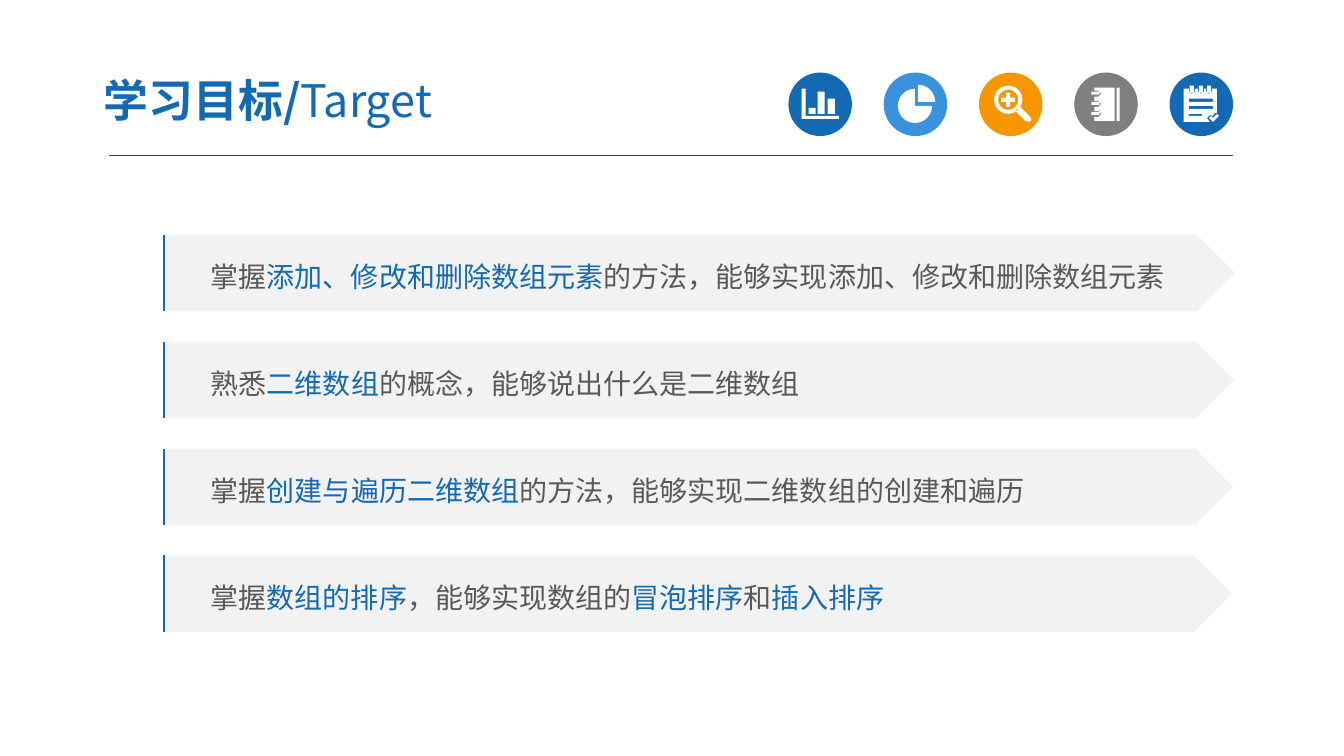
from math import cos, radians, sin

from lxml.etree import SubElement
from pptx import Presentation
from pptx.dml.color import RGBColor
from pptx.enum.shapes import MSO_CONNECTOR, MSO_SHAPE
from pptx.enum.text import MSO_ANCHOR, MSO_AUTO_SIZE, PP_ALIGN
from pptx.oxml.ns import qn
from pptx.util import Inches, Pt

BLUE = RGBColor(0x13, 0x69, 0xB2)
LIGHT_BLUE = RGBColor(0x39, 0x92, 0xDB)
ORANGE = RGBColor(0xF7, 0x96, 0x00)
GRAY = RGBColor(0x7F, 0x7F, 0x7F)
RULE_GRAY = RGBColor(0x40, 0x40, 0x40)
PALE = RGBColor(0xF2, 0xF2, 0xF2)
TEXT_GRAY = RGBColor(0x59, 0x59, 0x59)
WHITE = RGBColor(0xFF, 0xFF, 0xFF)
FONT = "Noto Sans CJK SC"

ICON_SIZE = 0.63
# Each goal is a list of (text, highlighted) pieces.
GOALS = [
    [("掌握", False), ("添加、修改和删除数组元素", True),
     ("的方法，能够实现添加、修改和删除数组元素", False)],
    [("熟悉", False), ("二维数组", True), ("的概念，能够说出什么是二维数组", False)],
    [("掌握", False), ("创建与遍历二维数组", True),
     ("的方法，能够实现二维数组的创建和遍历", False)],
    [("掌握", False), ("数组的排序", True), ("，能够实现数组的", False),
     ("冒泡排序", True), ("和", False), ("插入排序", True)],
]


def add_run(paragraph, text, size, color, bold=False):
    run = paragraph.add_run()
    run.text = text
    run.font.size = Pt(size)
    run.font.bold = bold
    run.font.color.rgb = color
    run.font.name = FONT
    SubElement(run.font._element, qn("a:ea"), typeface=FONT)


def add_filled(slide, kind, box, color):
    shape = slide.shapes.add_shape(kind, *[Inches(value) for value in box])
    shape.shadow.inherit = False
    shape.fill.solid()
    shape.fill.fore_color.rgb = color
    shape.line.fill.background()
    return shape


def block(left, top, width, height):
    """Outline of a rectangle."""
    right, bottom = left + width, top + height
    return [(left, top), (right, top), (right, bottom), (left, bottom)]


def arc(x, y, radius, start=0, sweep=360):
    """Points along an arc, clockwise from the right, in degrees."""
    steps = sweep // 15
    angles = [radians(start + sweep * step / steps) for step in range(steps + 1)]
    return [(x + radius * cos(angle), y + radius * sin(angle)) for angle in angles]


def bar_chart_outlines():
    frame = [(0.13, 0.16), (0.17, 0.16), (0.17, 0.43), (0.5, 0.43), (0.5, 0.46), (0.13, 0.46)]
    return [frame, block(0.2, 0.35, 0.07, 0.06), block(0.29, 0.19, 0.07, 0.22),
            block(0.39, 0.26, 0.07, 0.15)]


def pie_outlines():
    return [[(0.31, 0.33)] + arc(0.31, 0.33, 0.17, 0, 270),
            [(0.34, 0.29)] + arc(0.34, 0.29, 0.17, 270, 90)]


def magnifier_outlines():
    x, y, arm, half = 0.29, 0.27, 0.07, 0.02
    plus = [(x - half, y - arm), (x + half, y - arm), (x + half, y - half),
            (x + arm, y - half), (x + arm, y + half), (x + half, y + half),
            (x + half, y + arm), (x - half, y + arm), (x - half, y + half),
            (x - arm, y + half), (x - arm, y - half), (x - half, y - half)]
    handle = [(0.41, 0.34), (0.51, 0.44), (0.52, 0.47), (0.5, 0.49), (0.46, 0.48), (0.36, 0.38)]
    return [arc(x, y, 0.14), arc(x, y, 0.1), plus, handle]


def notebook_outlines():
    cover = [(0.2, 0.15), (0.4, 0.15), (0.4, 0.48), (0.2, 0.48)]
    rings = []
    for middle in (0.41, 0.31, 0.21):
        cover += [(0.2, middle + 0.03), (0.24, middle + 0.03), (0.27, middle),
                  (0.24, middle - 0.03), (0.2, middle - 0.03)]
        rings.append(block(0.17, middle - 0.02, 0.08, 0.03))
    return [cover, block(0.42, 0.15, 0.03, 0.33)] + rings


def notepad_outlines():
    sheet = [(0.14, 0.16)]
    rings = []
    for middle in (0.22, 0.31, 0.39):
        sheet += [(middle - 0.03, 0.16), (middle - 0.03, 0.19), (middle, 0.21),
                  (middle + 0.03, 0.19), (middle + 0.03, 0.16)]
        rings.append(block(middle - 0.02, 0.13, 0.04, 0.07))
    sheet += [(0.47, 0.16), (0.47, 0.4), (0.45, 0.4), (0.43, 0.43), (0.4, 0.42),
              (0.37, 0.45), (0.4, 0.49), (0.14, 0.49)]
    lines = [block(0.19, 0.26, 0.24, 0.03), block(0.19, 0.33, 0.24, 0.03),
             block(0.19, 0.41, 0.13, 0.02)]
    tick = [(0.39, 0.45), (0.41, 0.43), (0.43, 0.45), (0.47, 0.41), (0.49, 0.43), (0.43, 0.49)]
    return [sheet, tick] + rings + lines


def add_symbol(slide, left, top, outlines):
    """Draw all outlines as one white shape; nested outlines become holes."""
    placed = [[(Inches(left + x), Inches(top + y)) for x, y in outline] for outline in outlines]
    builder = slide.shapes.build_freeform(*placed[0][0])
    for index, points in enumerate(placed):
        if index:
            builder.move_to(*points[0])
        builder.add_line_segments(points[1:], close=True)
    symbol = builder.convert_to_shape()
    symbol.shadow.inherit = False
    symbol.fill.solid()
    symbol.fill.fore_color.rgb = WHITE
    symbol.line.fill.background()


def add_icons(slide, left, top, pitch):
    icons = [(bar_chart_outlines, BLUE), (pie_outlines, LIGHT_BLUE),
             (magnifier_outlines, ORANGE), (notebook_outlines, GRAY), (notepad_outlines, BLUE)]
    for index, (outlines, color) in enumerate(icons):
        x = left + index * pitch
        add_filled(slide, MSO_SHAPE.OVAL, (x, top, ICON_SIZE, ICON_SIZE), color)
        add_symbol(slide, x, top, outlines())


def add_rule(slide, left, right, y):
    rule = slide.shapes.add_connector(MSO_CONNECTOR.STRAIGHT, Inches(left), Inches(y),
                                      Inches(right), Inches(y))
    rule.line.color.rgb = RULE_GRAY
    rule.line.width = Pt(0.75)
    SubElement(rule._element.spPr, qn("a:effectLst"))


def add_title(slide, left, top, width, height):
    title = slide.shapes.title
    title.left, title.top = Inches(left), Inches(top)
    title.width, title.height = Inches(width), Inches(height)
    frame = title.text_frame
    frame.auto_size = MSO_AUTO_SIZE.NONE
    frame.vertical_anchor = MSO_ANCHOR.MIDDLE
    frame.margin_left = frame.margin_right = Inches(0.13)
    frame.margin_top = frame.margin_bottom = Inches(0.07)
    paragraph = frame.paragraphs[0]
    paragraph.alignment = PP_ALIGN.LEFT
    add_run(paragraph, "学习目标/", 32, BLUE, bold=True)
    add_run(paragraph, "Target", 32, BLUE)


def add_edge(slide, left, top, width, height):
    """Stroke the left side of the given box."""
    bottom = Inches(top + height)
    builder = slide.shapes.build_freeform(Inches(left + width), bottom)
    builder.move_to(Inches(left), bottom)
    builder.add_line_segments([(Inches(left), Inches(top))], close=False)
    edge = builder.convert_to_shape()
    edge.shadow.inherit = False
    edge.fill.background()
    edge.line.color.rgb = BLUE
    edge.line.width = Pt(1.5)


def add_goal(slide, pieces, left, top, width, height):
    arrow = add_filled(slide, MSO_SHAPE.PENTAGON, (left, top, width, height), PALE)
    frame = arrow.text_frame
    frame.word_wrap = True
    frame.vertical_anchor = MSO_ANCHOR.MIDDLE
    frame.margin_left = Inches(0.47)
    paragraph = frame.paragraphs[0]
    paragraph.alignment = PP_ALIGN.LEFT
    paragraph.line_spacing = 1.2
    for text, highlighted in pieces:
        add_run(paragraph, text, 20, BLUE if highlighted else TEXT_GRAY)
    add_edge(slide, left + 0.01, top, 0.16, height)


def main():
    presentation = Presentation()
    presentation.slide_width = Inches(13.33)
    presentation.slide_height = Inches(7.5)
    slide = presentation.slides.add_slide(presentation.slide_layouts[5])
    add_rule(slide, 1.08, 12.23, 1.54)
    add_icons(slide, 7.82, 0.72, pitch=0.945)
    add_title(slide, 0.9, 0.63, 5.22, 0.72)
    for index, pieces in enumerate(GOALS):
        add_goal(slide, pieces, 1.62, 2.33 + index * 1.06, 10.63 - index * 0.01, 0.76)
    presentation.save("out.pptx")


if __name__ == "__main__":
    main()
